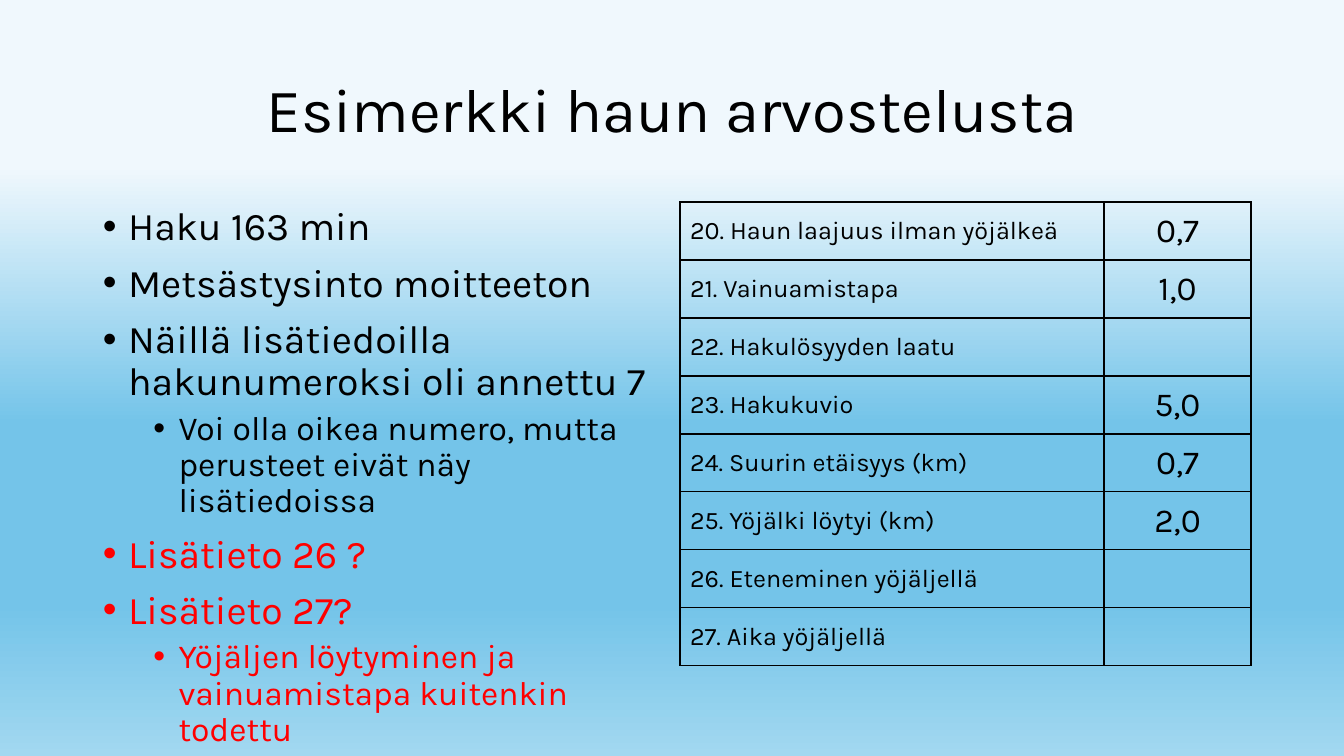
from lxml.etree import SubElement
from pptx import Presentation
from pptx.dml.color import RGBColor
from pptx.enum.text import MSO_ANCHOR as Anchor, PP_ALIGN as Align
from pptx.oxml.ns import qn
from pptx.util import Pt

PX = 12192000 / 1344  # EMU per px
FONT = "Karla"
BLACK, RED = "000000", "FF0000"
SKY_STOPS = [(22, "F0F8FD"), (56, "74C4E9"), (80, "74C4E9"), (100, "A2D8F0")]


def px(*lengths):
    return [round(length * PX) for length in lengths]


def style(paragraph, size, color=BLACK):
    paragraph.font.name = FONT
    paragraph.font.size = Pt(size)
    paragraph.font.color.rgb = RGBColor.from_string(color)


presentation = Presentation()
presentation.slide_width, presentation.slide_height = px(1344, 756)
slide = presentation.slides.add_slide(presentation.slide_layouts[6])

# Background: sky gradient from top to bottom
background = slide.background.fill
background.gradient()
background.gradient_angle = 270
stop_list = next(slide.background._cSld.iter(qn("a:gsLst")))
for stop in list(stop_list):
    stop_list.remove(stop)
for percent, color in SKY_STOPS:
    stop = SubElement(stop_list, qn("a:gs"), pos=str(percent * 1000))
    SubElement(stop, qn("a:srgbClr"), val=color)

# Title
title = slide.shapes.add_textbox(*px(93, 40, 1159, 146)).text_frame
title.word_wrap = True
title.vertical_anchor = Anchor.MIDDLE
heading = title.paragraphs[0]
heading.text = "Esimerkki haun arvostelusta"
heading.alignment = Align.CENTER
heading.line_spacing = 0.9
style(heading, 44)

# Bullet list: level, colour, text
bullets = [
    (0, BLACK, "Haku 163 min"),
    (0, BLACK, "Metsästysinto moitteeton"),
    (0, BLACK, "Näillä lisätiedoilla hakunumeroksi oli annettu 7"),
    (1, BLACK, "Voi olla oikea numero, mutta perusteet eivät näy lisätiedoissa"),
    (0, RED, "Lisätieto 26 ?"),
    (0, RED, "Lisätieto 27?"),
    (1, RED, "Yöjäljen löytyminen ja vainuamistapa kuitenkin todettu"),
]
body = slide.shapes.add_textbox(*px(93, 202, 572, 480)).text_frame
body.word_wrap = True
for index, (level, color, text) in enumerate(bullets):
    paragraph = body.add_paragraph() if index else body.paragraphs[0]
    paragraph.text = text
    paragraph.level = level
    paragraph.line_spacing = 0.9
    paragraph.space_before = Pt(5 if level else 10)
    style(paragraph, 24 if level else 28, color)
    properties = paragraph._p.get_or_add_pPr()
    properties.set("marL", str(228600 + 457200 * level))
    properties.set("indent", "-228600")
    bullet_font = SubElement(properties, qn("a:buFont"), typeface="Arial")
    bullet = SubElement(properties, qn("a:buChar"), char="•")
    default_run = properties.find(qn("a:defRPr"))
    if default_run is not None:
        default_run.addprevious(bullet_font)
        default_run.addprevious(bullet)

# Table of search details
details = [
    ("20. Haun laajuus ilman yöjälkeä", "0,7"),
    ("21. Vainuamistapa", "1,0"),
    ("22. Hakulösyyden laatu", ""),
    ("23. Hakukuvio", "5,0"),
    ("24. Suurin etäisyys (km)", "0,7"),
    ("25. Yöjälki löytyi (km)", "2,0"),
    ("26. Eteneminen yöjäljellä", ""),
    ("27. Aika yöjäljellä", ""),
]
table = slide.shapes.add_table(len(details), 2, *px(680, 202, 571, 58 * len(details))).table
table.first_row = table.horz_banding = False
for column, width in zip(table.columns, px(424, 147)):
    column.width = width
for row, texts in enumerate(details):
    for column, (text, size, alignment) in enumerate(zip(texts, (18, 24), (Align.LEFT, Align.CENTER))):
        cell = table.cell(row, column)
        cell.vertical_anchor = Anchor.MIDDLE
        paragraph = cell.text_frame.paragraphs[0]
        paragraph.text = text
        paragraph.alignment = alignment
        style(paragraph, size)
        cell_properties = cell._tc.get_or_add_tcPr()
        for side in ("a:lnL", "a:lnR", "a:lnT", "a:lnB"):
            border = SubElement(cell_properties, qn(side), w=str(Pt(1)))
            SubElement(SubElement(border, qn("a:solidFill")), qn("a:srgbClr"), val=BLACK)
        cell.fill.background()

presentation.save("out.pptx")
